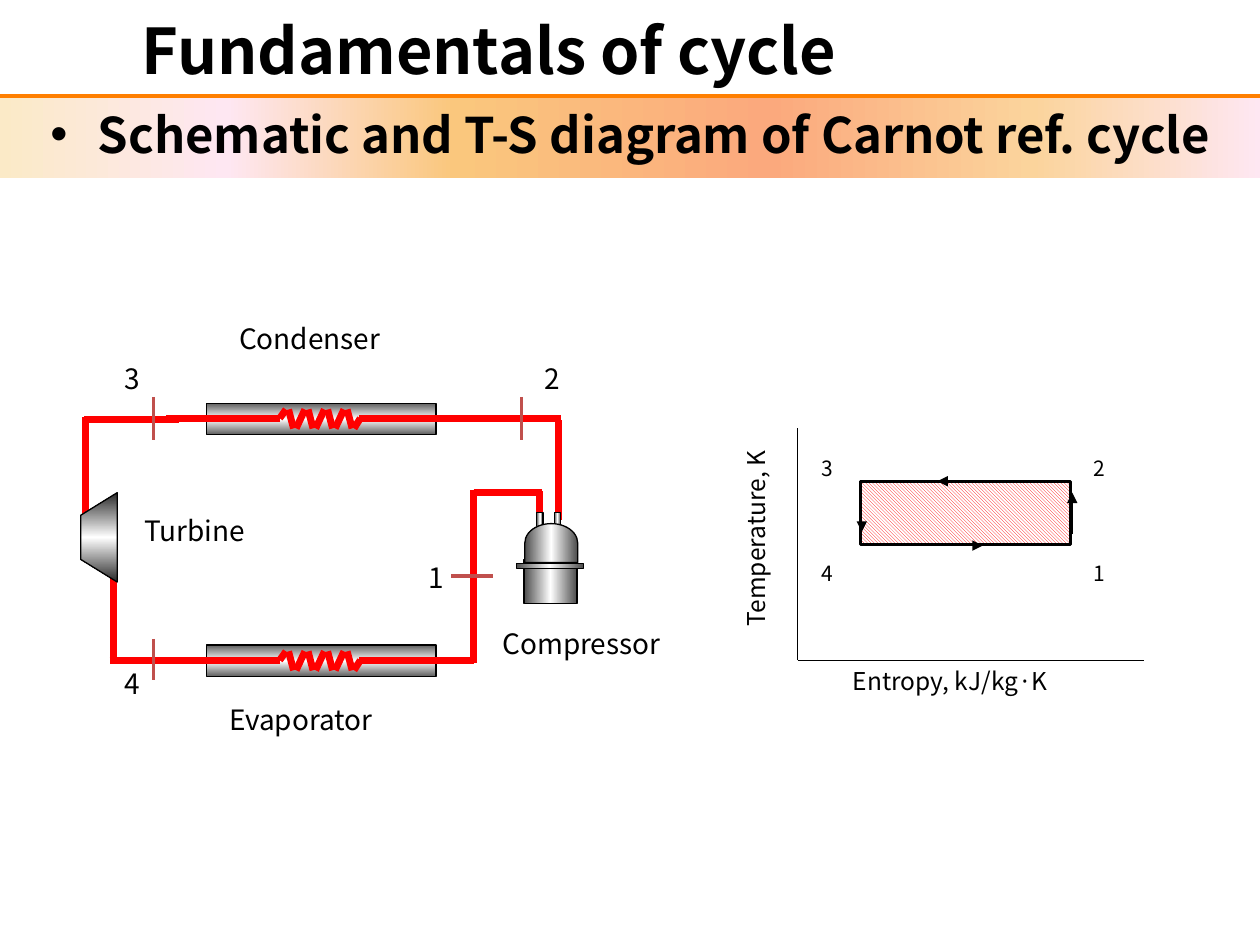
from dataclasses import dataclass

import lxml.etree
import pptx
import pptx.dml.color
import pptx.enum.dml
import pptx.enum.shapes
import pptx.enum.text
import pptx.oxml.ns
import pptx.util

Inches = pptx.util.Inches
Shape = pptx.enum.shapes.MSO_SHAPE
FONT = "Noto Sans CJK KR"
PIPE, MARK, INK = "FF0000", "C0504D", "000000"
STEEL = [(0, "4D4D4D"), (50, "FFFFFF"), (100, "4D4D4D")]
TUBE = [(0, "5F5F5F"), (50, "FFFFFF"), (100, "5F5F5F")]
BLADE = [(0, "292929"), (50, "FFFFFF"), (100, "292929")]
BANNER = [(0, "FBEAC7"), (18, "FEE7F2"), (36, "FAC77D"),
          (61, "FBA97D"), (82, "FBD49C"), (100, "FEE7F2")]


@dataclass
class Stroke:
    x1: float
    y1: float
    x2: float
    y2: float


@dataclass
class Label:
    text: str
    left: float
    top: float
    width: float
    height: float
    size: int


def rgb(value: str):
    return pptx.dml.color.RGBColor.from_string(value)


def add_element(parent, tag: str, **attributes):
    return lxml.etree.SubElement(parent, pptx.oxml.ns.qn(tag), **attributes)


def place(shape, left, top, width, height) -> None:
    shape.left, shape.top = Inches(left), Inches(top)
    shape.width, shape.height = Inches(width), Inches(height)


def draw_line(page, stroke: Stroke, color: str, weight: float, arrow: bool = False) -> None:
    line = page.shapes.add_connector(
        pptx.enum.shapes.MSO_CONNECTOR.STRAIGHT,
        Inches(stroke.x1), Inches(stroke.y1), Inches(stroke.x2), Inches(stroke.y2))
    line.line.color.rgb = rgb(color)
    line.line.width = pptx.util.Pt(weight)
    if arrow:
        add_element(line.line._get_or_add_ln(), "a:tailEnd", type="triangle")
    add_element(line._element.spPr, "a:effectLst")


def fill_gradient(shape, stops, angle: int) -> None:
    shape.fill.gradient()
    shape.fill.gradient_angle = angle
    stop_list = shape._element.spPr.find(".//" + pptx.oxml.ns.qn("a:gsLst"))
    for old in list(stop_list):
        stop_list.remove(old)
    for position, color in stops:
        stop = add_element(stop_list, "a:gs", pos=str(position * 1000))
        add_element(stop, "a:srgbClr", val=color)


def outline(shape, weight: float = 0.75) -> None:
    shape.line.color.rgb = rgb(INK)
    shape.line.width = pptx.util.Pt(weight)
    shape.shadow.inherit = False


def draw_metal(page, kind, bounds, stops, angle: int = 0):
    part = page.shapes.add_shape(kind, *map(Inches, bounds))
    fill_gradient(part, stops, angle)
    outline(part)
    return part


def format_text(frame, text: str, size: int, bold: bool = False) -> None:
    frame.text = text
    font = frame.paragraphs[0].font
    font.name, font.size, font.bold = FONT, pptx.util.Pt(size), bold
    font.color.rgb = rgb(INK)


def draw_label(page, label: Label):
    box = page.shapes.add_textbox(*map(Inches, (label.left, label.top, label.width, label.height)))
    box.text_frame.word_wrap = True
    format_text(box.text_frame, label.text, label.size)
    return box


def draw_exchanger(page, middle: float) -> None:
    """Tube with a zigzag coil, fed from both sides."""
    draw_metal(page, Shape.RECTANGLE, (1.64, middle - 0.12, 1.82, 0.25), TUBE, 90)
    high, low, pitch = middle - 0.07, middle + 0.08, 0.155
    strokes = [Stroke(1.32, middle, 2.22, middle), Stroke(2.85, middle, 3.76, middle),
               Stroke(2.22, middle, 2.27, high), Stroke(2.81, low, 2.86, middle)]
    for turn in range(4):
        x = 2.29 + turn * pitch
        strokes.append(Stroke(x, high, x + 0.04, low))
        if turn < 3:
            strokes.append(Stroke(x + 0.06, low, x + 0.13, high))
    for stroke in strokes:
        draw_line(page, stroke, PIPE, 4)


def draw_headings(page) -> None:
    title, body = page.shapes.title, page.placeholders[1]
    place(title, 0, 0, 7.76, 0.79)
    place(body, 0, 0.78, 10, 0.63)
    fill_gradient(body, BANNER, 0)
    properties = body.text_frame.paragraphs[0]._p.get_or_add_pPr()
    properties.set("marL", "0")
    properties.set("indent", "0")
    add_element(properties, "a:buNone")
    for box, text, size in ((title, "Fundamentals of cycle", 36),
                            (body, "Schematic and T-S diagram of Carnot ref. cycle", 28)):
        frame = box.text_frame
        frame.auto_size = pptx.enum.text.MSO_AUTO_SIZE.NONE
        format_text(frame, text, size, bold=True)
        frame.paragraphs[0].alignment = pptx.enum.text.PP_ALIGN.CENTER
        frame.paragraphs[0].space_before = pptx.util.Pt(0)
    title.text_frame.vertical_anchor = pptx.enum.text.MSO_ANCHOR.MIDDLE
    draw_line(page, Stroke(0, 0.76, 10, 0.76), "FF7F00", 2)


def draw_schematic(page) -> None:
    # Pipes to the turbine and the compressor
    for ends in ((0.9, 4.3, 0.9, 5.26), (4.43, 4.13, 4.43, 3.33), (3.76, 3.91, 4.3, 3.91),
                 (3.76, 5.26, 3.76, 3.89), (4.28, 3.9, 4.28, 4.15), (3.65, 3.32, 4.45, 3.32),
                 (1.42, 3.33, 0.67, 3.33), (0.68, 3.31, 0.68, 4.18), (0.87, 5.24, 1.37, 5.24)):
        draw_line(page, Stroke(*ends), PIPE, 4)

    # Compressor: two necks, base, flange and dome
    for bounds in ((4.26, 4.07, 0.05, 0.15), (4.4, 4.07, 0.05, 0.15),
                   (4.16, 4.44, 0.42, 0.35), (4.1, 4.47, 0.53, 0.04)):
        draw_metal(page, Shape.RECTANGLE, bounds, STEEL)
    dome = draw_metal(page, Shape.FLOWCHART_DELAY, (4.22, 4.1, 0.31, 0.42), STEEL, 90)
    dome.rotation = 270

    # Condenser and evaporator
    for middle in (3.32, 5.24):
        draw_exchanger(page, middle)

    # Turbine
    builder = page.shapes.build_freeform(Inches(0.93), Inches(3.91))
    builder.add_line_segments([(Inches(x), Inches(y)) for x, y in
                               ((0.64, 4.09), (0.64, 4.44), (0.93, 4.62))], close=True)
    turbine = builder.convert_to_shape()
    fill_gradient(turbine, BLADE, 90)
    outline(turbine)

    # State points and names
    for ends in ((4.14, 3.15, 4.14, 3.49), (1.22, 3.15, 1.22, 3.49),
                 (1.22, 5.07, 1.22, 5.4), (3.91, 4.57, 3.58, 4.57)):
        draw_line(page, Stroke(*ends), MARK, 2)
    for text, left, top, width in (
            ("Compressor", 3.89, 4.92, 1.67), ("Evaporator", 1.72, 5.53, 1.67),
            ("Condenser", 1.8, 2.5, 1.67), ("Turbine", 1.05, 4.03, 1.25),
            ("1", 3.3, 4.4, 0.42), ("2", 4.22, 2.82, 0.42),
            ("3", 0.89, 2.82, 0.42), ("4", 0.89, 5.24, 0.42)):
        draw_label(page, Label(text, left, top, width, 0.37, 16))


def draw_ts_diagram(page) -> None:
    # Axes and cycle area
    for ends in ((6.33, 3.4, 6.33, 5.24), (6.33, 5.24, 9.08, 5.24)):
        draw_line(page, Stroke(*ends), INK, 0.75)
    area = page.shapes.add_shape(Shape.RECTANGLE, *map(Inches, (6.83, 3.82, 1.67, 0.5)))
    area.fill.patterned()
    area.fill.pattern = pptx.enum.dml.MSO_PATTERN.LIGHT_DOWNWARD_DIAGONAL
    area.fill.fore_color.rgb = rgb(PIPE)
    area.fill.back_color.rgb = rgb("FFFFFF")
    outline(area, 1.75)

    # Axis titles and state numbers
    axis_title = draw_label(page, Label("Temperature, K", 5.83, 3.24, 0.43, 1.83, 14))
    axis_title.text_frame._txBody.bodyPr.set("vert", "vert270")
    draw_label(page, Label("Entropy, kJ/kg·K", 6.67, 5.24, 2.16, 0.34, 14))
    for text, left, top in (("1", 8.58, 4.4), ("2", 8.58, 3.57),
                            ("3", 6.42, 3.57), ("4", 6.42, 4.4)):
        draw_label(page, Label(text, left, top, 0.42, 0.3, 12))

    # Direction of the cycle
    for ends in ((8.51, 4.24, 8.51, 3.91), (7.79, 3.82, 7.44, 3.82),
                 (7.46, 4.33, 7.8, 4.33), (6.84, 3.89, 6.84, 4.22)):
        draw_line(page, Stroke(*ends), INK, 0.75, arrow=True)


def main() -> None:
    deck = pptx.Presentation()
    deck.slide_width, deck.slide_height = Inches(10), Inches(7.5)
    page = deck.slides.add_slide(deck.slide_layouts[1])
    draw_headings(page)
    draw_schematic(page)
    draw_ts_diagram(page)
    deck.save("out.pptx")


if __name__ == "__main__":
    main()
